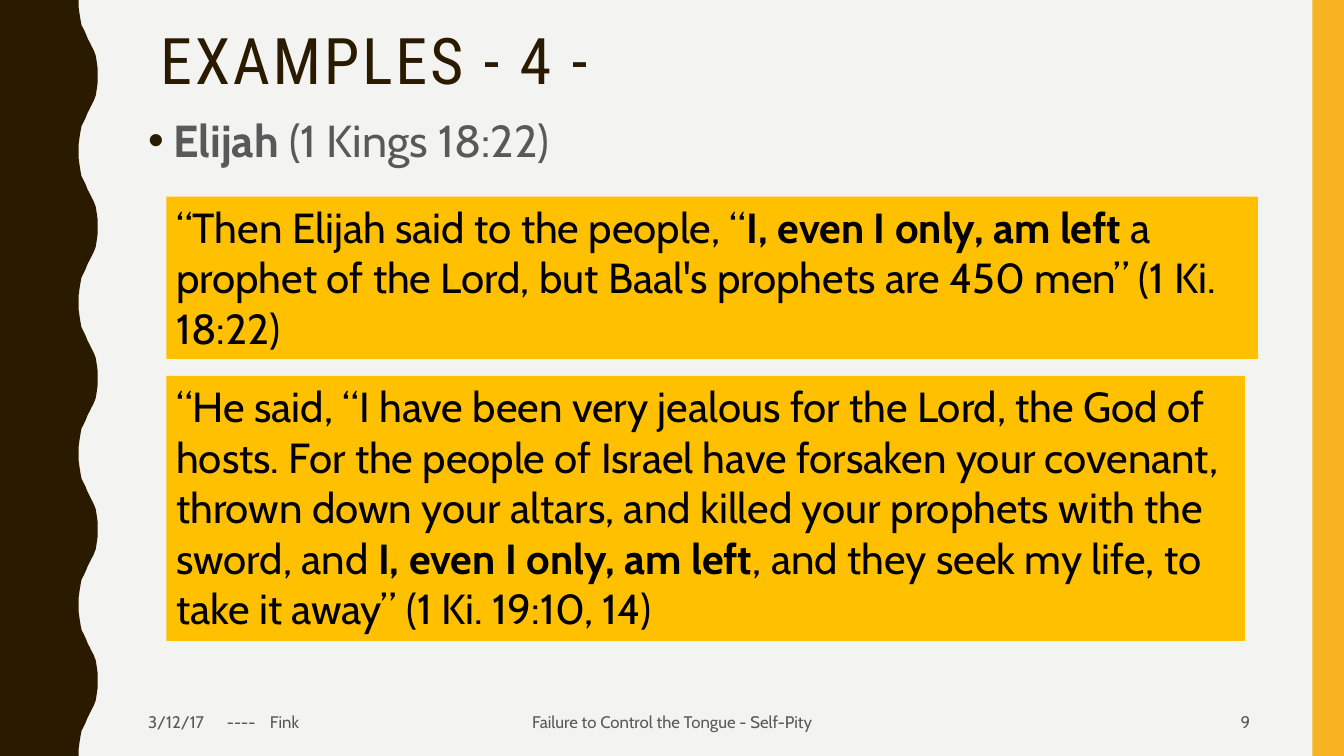
from dataclasses import dataclass

from lxml import etree
from pptx import Presentation
from pptx.dml.color import RGBColor
from pptx.enum.shapes import MSO_SHAPE
from pptx.enum.text import MSO_ANCHOR, MSO_AUTO_SIZE, PP_ALIGN
from pptx.oxml.ns import qn
from pptx.shapes.autoshape import Shape
from pptx.slide import Slide
from pptx.text.text import _Paragraph
from pptx.util import Pt

RECTANGLE = MSO_SHAPE.RECTANGLE
TOP, MIDDLE = MSO_ANCHOR.TOP, MSO_ANCHOR.MIDDLE
LEFT, CENTER, RIGHT = PP_ALIGN.LEFT, PP_ALIGN.CENTER, PP_ALIGN.RIGHT
FIT_TEXT = MSO_AUTO_SIZE.SHAPE_TO_FIT_TEXT

SLIDE_WIDTH, SLIDE_HEIGHT = 960, 540
STRIPE_WIDTH = 22.5
FOOTER_TOP, FOOTER_HEIGHT = 501.84, 27.36
QUOTE_LEFT = 118.8
HALF_WAVE = 54
WAVE_COUNT = 5
WAVE_CURVE = [
    (56.2, 0), (56.2, 5), (56.9, 10), (57.6, 14.4), (58.3, 18),
    (59.8, 20.9), (61.2, 23.8), (62.6, 27.4), (64.1, 30.2), (65.5, 33.1),
    (67, 36), (68.4, 39.6), (69.1, 43.9), (69.8, 49), (69.8, HALF_WAVE),
]


@dataclass(frozen=True)
class Theme:
    background: str = "F3F3F2"
    dark: str = "2A1A00"
    stripe: str = "F8B323"
    quote: str = "FFC000"
    muted: str = "595959"
    black: str = "000000"
    heading_font: str = "Roboto Condensed"
    body_font: str = "Cabin"
    title_size: float = 45.9
    body_size: float = 32
    quote_size: float = 30
    footer_size: float = 12


THEME = Theme()


@dataclass(frozen=True)
class Span:
    text: str
    bold: bool = False


@dataclass(frozen=True)
class TextBlock:
    left: float
    top: float
    width: float
    height: float
    spans: tuple[Span, ...]
    size: float
    color: str = THEME.muted
    font: str = THEME.body_font
    fill: str | None = None
    anchor: MSO_ANCHOR = TOP
    align: PP_ALIGN = LEFT
    letter_spacing: float = 0
    line_spacing: float = 1
    space_before: float = 0
    bullet_indent: float = 0
    tab_stops: tuple[float, ...] = ()


def footer(left: float, width: float, text: str, align: PP_ALIGN,
           tab_stops: tuple[float, ...] = ()) -> TextBlock:
    """Describe one field of the footer row."""
    return TextBlock(left, FOOTER_TOP, width, FOOTER_HEIGHT, (Span(text),), THEME.footer_size,
                     anchor=MIDDLE, align=align, tab_stops=tab_stops)


def quote(top: float, width: float, height: float, *spans: Span) -> TextBlock:
    """Describe one filled quotation."""
    return TextBlock(QUOTE_LEFT, top, width, height, spans, THEME.quote_size,
                     color=THEME.black, fill=THEME.quote)


BLOCKS = [
    TextBlock(107.28, 17.28, 792.72, 56.16, (Span("EXAMPLES - 4 -"),), THEME.title_size,
              color=THEME.dark, font=THEME.heading_font, anchor=MIDDLE,
              letter_spacing=2, line_spacing=0.9),
    TextBlock(98.64, 73.44, 799.92, 429.12,
              (Span("Elijah", True), Span(" (1 Kings 18:22)")), THEME.body_size,
              line_spacing=1.1, space_before=7, bullet_indent=18),
    footer(98.64, 183.6, "3/12/17\t----\tFink", LEFT, (56.4, 87.1)),
    footer(318.24, 324, "Failure to Control the Tongue - Self-Pity", CENTER),
    footer(678.24, 221.76, "9", RIGHT),
    quote(140.4, 779.76, 115.92,
          Span("“Then Elijah said to the people, “"),
          Span("I, even I only, am left ", True),
          Span("a prophet of the Lord, but Baal's prophets are 450 men” (1 Ki. 18:22)")),
    quote(268.56, 770.4, 189.36,
          Span("“He said, “I have been very jealous for the Lord, the God of hosts. "
               "For the people of Israel have forsaken your covenant, thrown down your altars, "
               "and killed your prophets with the sword, and "),
          Span("I, even I only, am left", True),
          Span(", and they seek my life, to take it away” (1 Ki. 19:10, 14)")),
]


def paint(shape: Shape, color: str) -> None:
    """Give a shape a plain fill without line or shadow."""
    shape.fill.solid()
    shape.fill.fore_color.rgb = RGBColor.from_string(color)
    shape.line.fill.background()
    shape.shadow.inherit = False


def draw_wave(slide: Slide) -> None:
    """Draw the dark wavy band on the left edge."""
    falling = [(x, 2 * HALF_WAVE - y) for x, y in reversed(WAVE_CURVE[:-1])]
    edge = [(Pt(x), Pt(y + wave * 2 * HALF_WAVE))
            for wave in range(WAVE_COUNT) for x, y in WAVE_CURVE + falling]
    builder = slide.shapes.build_freeform(0, 0, scale=1.0)
    builder.add_line_segments(edge + [(0, Pt(SLIDE_HEIGHT))], close=True)
    paint(builder.convert_to_shape(), THEME.dark)


def draw_stripe(slide: Slide) -> None:
    """Draw the stripe on the right edge."""
    stripe = slide.shapes.add_shape(RECTANGLE, Pt(SLIDE_WIDTH - STRIPE_WIDTH), 0,
                                    Pt(STRIPE_WIDTH), Pt(SLIDE_HEIGHT))
    paint(stripe, THEME.stripe)


def add_bullet(paragraph: _Paragraph, indent: float) -> None:
    """Give a paragraph a hanging round bullet."""
    properties = paragraph._p.get_or_add_pPr()
    properties.set("marL", str(Pt(indent)))
    properties.set("indent", str(-Pt(indent)))
    color = etree.SubElement(properties, qn("a:buClr"))
    etree.SubElement(color, qn("a:srgbClr"), val=THEME.dark)
    etree.SubElement(properties, qn("a:buFont"), typeface="Arial")
    etree.SubElement(properties, qn("a:buChar"), char="•")


def add_tab_stops(paragraph: _Paragraph, positions: tuple[float, ...]) -> None:
    """Set left-aligned tab stops on a paragraph."""
    tabs = etree.SubElement(paragraph._p.get_or_add_pPr(), qn("a:tabLst"))
    for position in positions:
        etree.SubElement(tabs, qn("a:tab"), pos=str(Pt(position)), algn="l")


def draw_block(slide: Slide, block: TextBlock) -> None:
    """Draw a text block with its runs."""
    bounds = Pt(block.left), Pt(block.top), Pt(block.width), Pt(block.height)
    if block.fill:
        shape = slide.shapes.add_shape(RECTANGLE, *bounds)
        paint(shape, block.fill)
        shape.text_frame.auto_size = FIT_TEXT
    else:
        shape = slide.shapes.add_textbox(*bounds)
    frame = shape.text_frame
    frame.word_wrap = True
    frame.vertical_anchor = block.anchor
    paragraph = frame.paragraphs[0]
    paragraph.alignment = block.align
    paragraph.line_spacing = block.line_spacing
    paragraph.space_before = Pt(block.space_before)
    if block.bullet_indent:
        add_bullet(paragraph, block.bullet_indent)
    if block.tab_stops:
        add_tab_stops(paragraph, block.tab_stops)
    for span in block.spans:
        run = paragraph.add_run()
        run.text = span.text
        run.font.name = block.font
        run.font.size = Pt(block.size)
        run.font.bold = span.bold
        run.font.color.rgb = RGBColor.from_string(block.color)
        if block.letter_spacing:
            run._r.get_or_add_rPr().set("spc", str(round(block.letter_spacing * 100)))


def main() -> None:
    """Build and save the slide."""
    presentation = Presentation()
    presentation.slide_width, presentation.slide_height = Pt(SLIDE_WIDTH), Pt(SLIDE_HEIGHT)
    slide = presentation.slides.add_slide(presentation.slide_layouts[6])
    slide.background.fill.solid()
    slide.background.fill.fore_color.rgb = RGBColor.from_string(THEME.background)
    draw_wave(slide)
    draw_stripe(slide)
    for block in BLOCKS:
        draw_block(slide, block)
    presentation.save("out.pptx")


if __name__ == "__main__":
    main()
